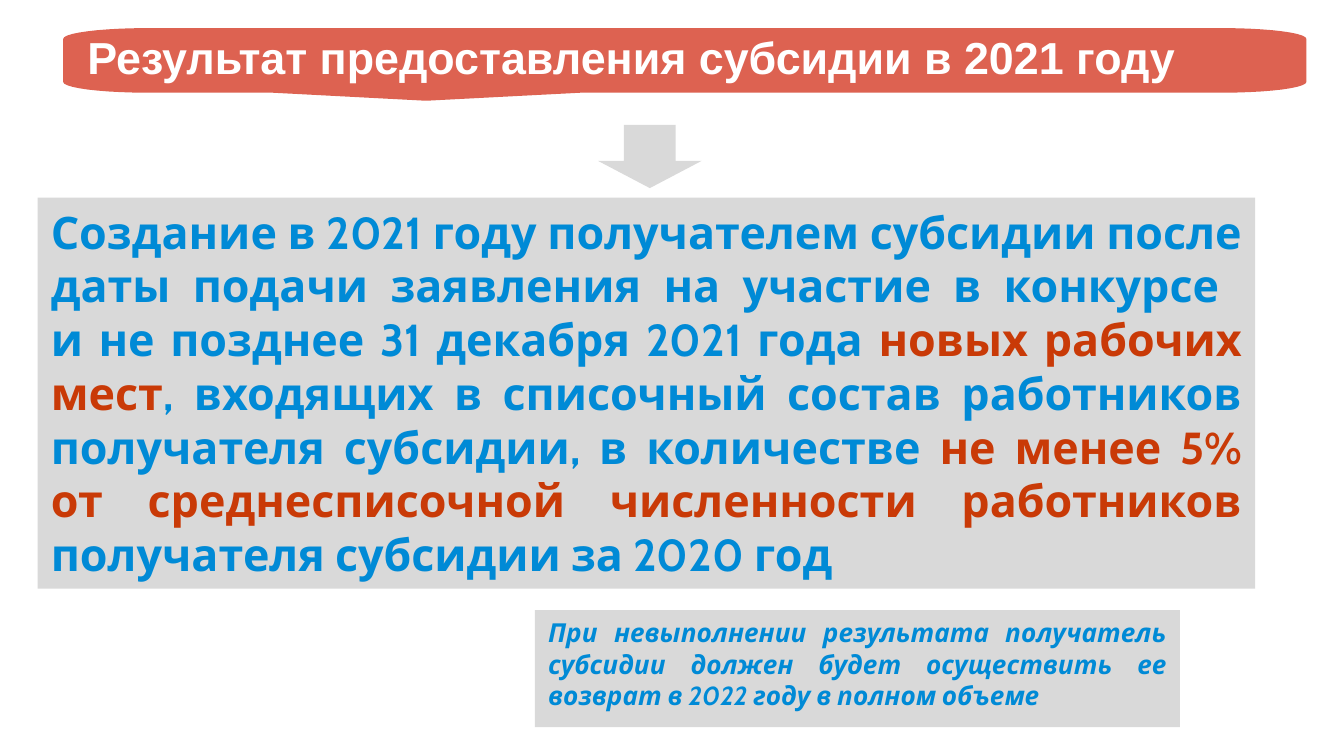
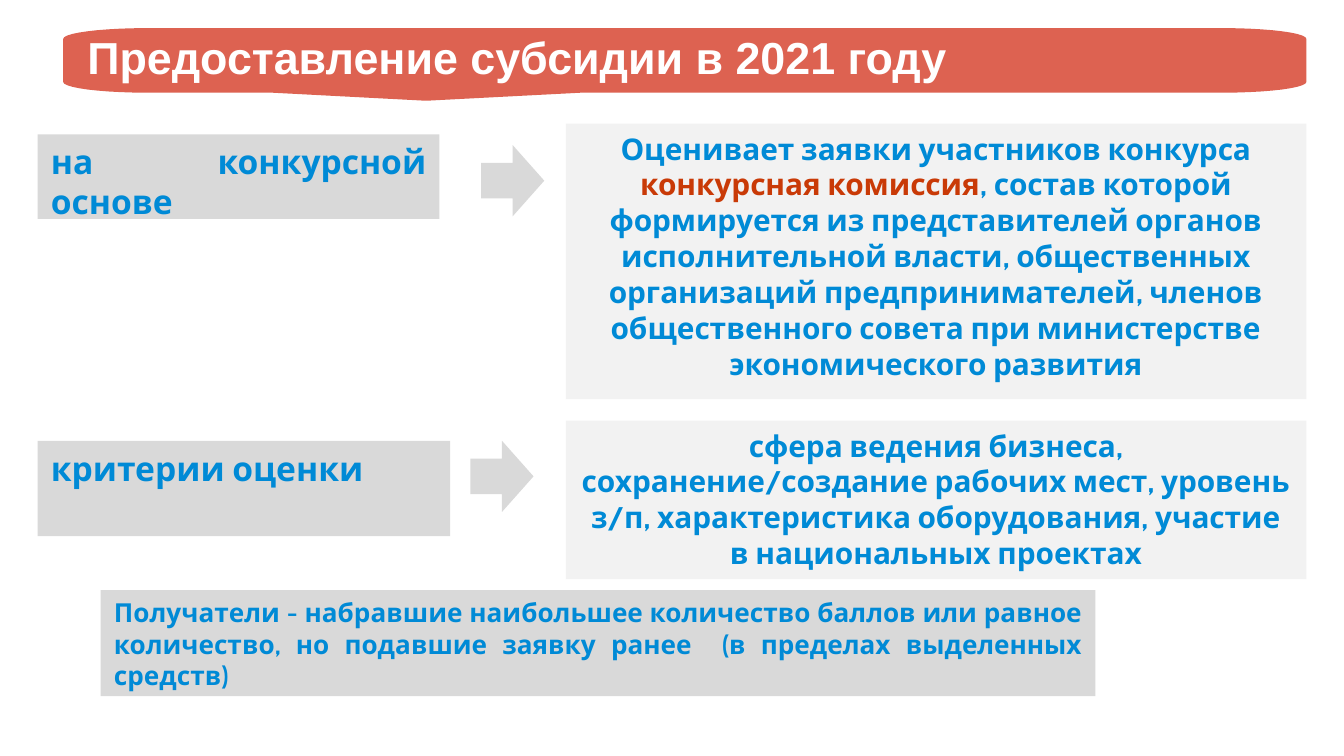
from math import cos, pi, sin

from pptx import Presentation
from pptx.dml.color import RGBColor
from pptx.enum.shapes import MSO_SHAPE as Shape
from pptx.enum.text import MSO_ANCHOR as Anchor, MSO_AUTO_SIZE as AutoSize, PP_ALIGN as Align
from pptx.util import Inches, Pt

RED = RGBColor(0xDD, 0x62, 0x51)
BLUE = RGBColor(0x00, 0x8A, 0xD6)
ACCENT = RGBColor(0xC9, 0x3A, 0x07)
GREY = RGBColor(0xD9, 0xD9, 0xD9)
PALE = RGBColor(0xF2, 0xF2, 0xF2)
WHITE = RGBColor(0xFF, 0xFF, 0xFF)

BAND = (0.47, 0.21, 9.25, 0.48)
CORNER = (0.62, 0.08)
POINTER = [(4.33, 0.69), (3.17, 0.75), (2.02, 0.69)]
CORNER_STEPS = 10


def band_outline():
    left, top, width, height = BAND
    across, down = CORNER
    right, bottom = left + width, top + height
    centres = [
        (left + across, top + down),
        (right - across, top + down),
        (right - across, bottom - down),
        (left + across, bottom - down),
    ]
    points = []
    for quarter, (x, y) in enumerate(centres):
        if quarter == 3:
            points += POINTER
        for step in range(CORNER_STEPS + 1):
            angle = pi + (quarter + step / CORNER_STEPS) * pi / 2
            points.append((x + across * cos(angle), y + down * sin(angle)))
    return points


class SlideBuilder:
    def __init__(self, deck):
        self.deck = deck
        self.page = None
        self.text_style = {"name": "Cabin", "bold": True}
        self.title_style = {"name": "Arial", "bold": True, "size": Pt(24)}

    def add_page(self, title):
        self.page = self.deck.slides.add_slide(self.deck.slide_layouts[5])
        heading = self.page.shapes.title
        heading._element.addprevious(self.add_band()._element)
        self.place(heading, BAND)
        frame_style = {
            "word_wrap": True,
            "auto_size": AutoSize.NONE,
            "vertical_anchor": Anchor.MIDDLE,
            "margin_left": Inches(0.18),
            "margin_right": Inches(0.18),
            "margin_top": Inches(0.12),
            "margin_bottom": Inches(0.12),
        }
        self.apply(heading.text_frame, frame_style)
        para = heading.text_frame.paragraphs[0]
        self.apply(para, {"alignment": Align.LEFT, "line_spacing": 0.9})
        self.add_span(para, title, WHITE, self.title_style)

    def add_band(self):
        points = [(Inches(x), Inches(y)) for x, y in band_outline()]
        builder = self.page.shapes.build_freeform(*points[0])
        builder.add_line_segments(points[1:], close=True)
        return self.paint(builder.convert_to_shape(), RED)

    def add_box(self, area, spans, size, fill=GREY, align=Align.JUSTIFY, italic=False):
        box = self.add_shape(Shape.RECTANGLE, area, fill)
        self.apply(box.text_frame, {"word_wrap": True, "vertical_anchor": Anchor.TOP})
        para = box.text_frame.paragraphs[0]
        para.alignment = align
        style = {**self.text_style, "size": Pt(size), "italic": italic}
        for text, color in spans:
            for number, line in enumerate(text.split("\n")):
                if number:
                    para.add_line_break()
                self.add_span(para, line, color, style)

    def add_arrow(self, area, rotation=0, head=0.5):
        arrow = self.add_shape(Shape.RIGHT_ARROW, area, GREY)
        arrow.rotation = rotation
        arrow.adjustments[1] = head

    def add_shape(self, kind, area, fill):
        shape = self.page.shapes.add_shape(kind, *map(Inches, area))
        return self.paint(shape, fill)

    def add_span(self, para, text, color, style):
        span = para.add_run()
        span.text = text
        self.apply(span.font, style)
        span.font.color.rgb = color

    def paint(self, shape, fill):
        shape.shadow.inherit = False
        shape.fill.solid()
        shape.fill.fore_color.rgb = fill
        shape.line.fill.background()
        return shape

    def place(self, shape, area):
        self.apply(shape, dict(zip(("left", "top", "width", "height"), map(Inches, area))))

    def apply(self, target, values):
        for name, value in values.items():
            setattr(target, name, value)


def build_result_page(builder):
    builder.add_page("Результат предоставления субсидии в 2021 году")
    result = [
        ("Создание в 2021 году получателем субсидии после даты подачи заявления "
         "на участие в конкурсе \nи не позднее 31 декабря 2021 года ", BLUE),
        ("новых рабочих мест", ACCENT),
        (", входящих в списочный состав работников получателя субсидии, в количестве ", BLUE),
        ("не менее 5% от среднесписочной численности работников", ACCENT),
        (" получателя субсидии за 2020 год", BLUE),
    ]
    builder.add_box((0.28, 1.47, 9.06, 2.91), result, 24)
    builder.add_arrow((4.6, 0.78, 0.47, 0.77), rotation=90, head=0.43)
    penalty = [
        ("При невыполнении результата получатель субсидии должен будет осуществить "
         "ее возврат в 2022 году в полном объеме", BLUE),
    ]
    builder.add_box((3.98, 4.54, 4.8, 0.87), penalty, 14, italic=True)


def build_selection_page(builder):
    builder.add_page("Предоставление субсидии в 2021 году")
    commission = [
        ("Оценивает заявки участников конкурса ", BLUE),
        ("конкурсная комиссия", ACCENT),
        (", состав которой формируется из представителей органов исполнительной власти, "
         "общественных организаций предпринимателей, членов общественного совета "
         "при министерстве экономического развития", BLUE),
    ]
    criteria = [
        ("сфера ведения бизнеса, сохранение/создание рабочих мест, уровень з/п, "
         "характеристика оборудования, участие в национальных проектах", BLUE),
    ]
    rows = [
        ("на конкурсной основе", (0.28, 1, 2.99, 0.63), (3.58, 1.08), commission, (0.92, 2.05)),
        ("критерии оценки", (0.28, 3.28, 3.07, 0.71), (3.5, 3.28), criteria, (3.13, 1.18)),
    ]
    for label, label_area, arrow_corner, details, (top, height) in rows:
        builder.add_box(label_area, [(label, BLUE)], 18)
        builder.add_arrow((*arrow_corner, 0.47, 0.53))
        builder.add_box((4.21, top, 5.51, height), details, 16, PALE, Align.CENTER)
    winners = [
        ("Получатели - набравшие наибольшее количество баллов или равное количество, "
         "но подавшие заявку ранее  (в пределах выделенных средств)", BLUE),
    ]
    builder.add_box((0.75, 4.39, 7.4, 0.79), winners, 14)


def main():
    deck = Presentation()
    deck.slide_width = Inches(10)
    deck.slide_height = deck.slide_width * 9 // 16
    builder = SlideBuilder(deck)
    build_result_page(builder)
    build_selection_page(builder)
    deck.save("out.pptx")


if __name__ == "__main__":
    main()
